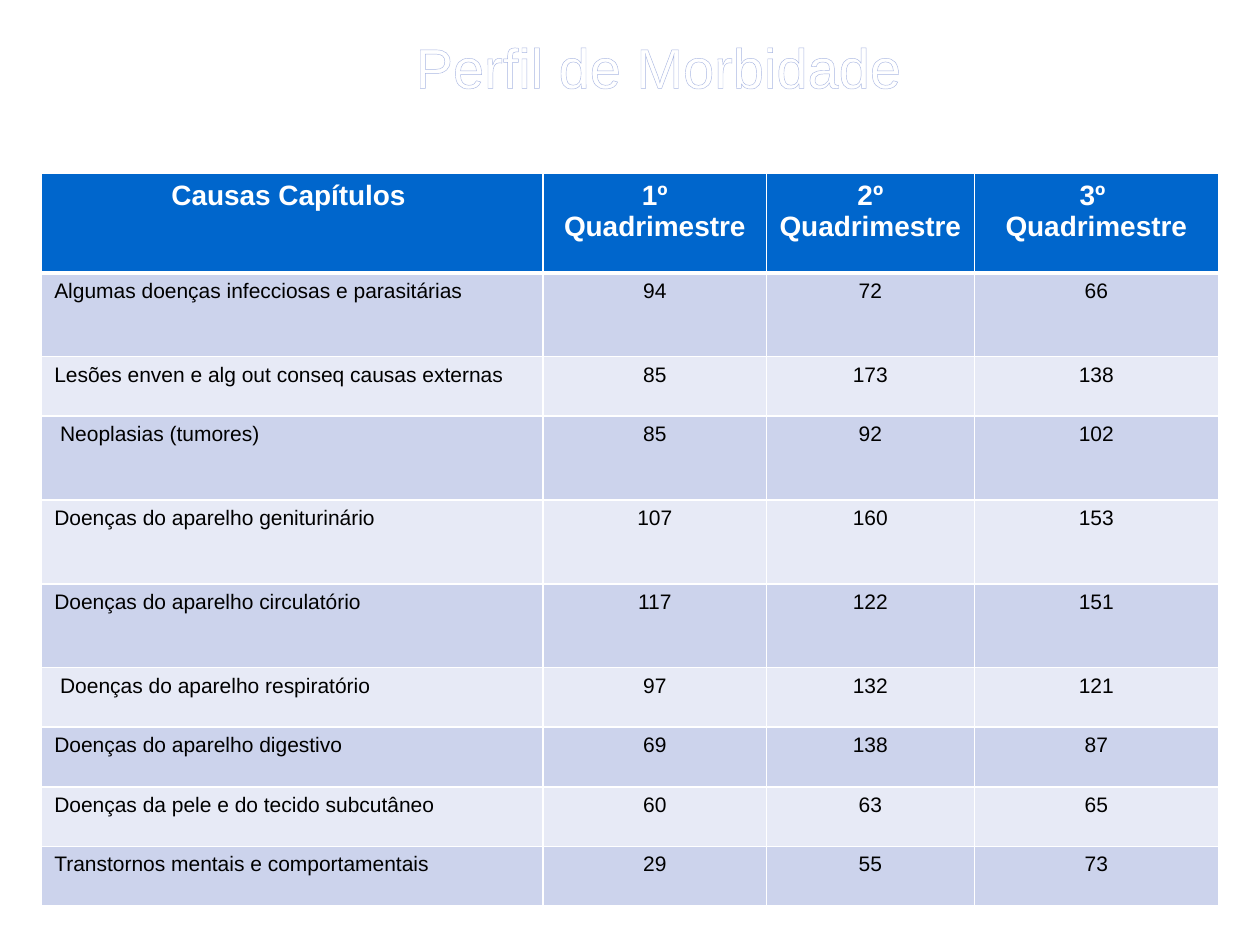
import pptx
import pptx.dml.color
import pptx.enum.text
import pptx.oxml
import pptx.oxml.ns
import pptx.util

Cm, Pt = pptx.util.Cm, pptx.util.Pt
CENTER = pptx.enum.text.PP_ALIGN.CENTER
LEFT = pptx.enum.text.PP_ALIGN.LEFT

WHITE, BLACK, BLUE, LAVENDER = "FFFFFF", "000000", "0066CC", "AAB8E2"
BANDS = ["CCD3EC", "E7EAF6"]
THIN, THICK = 1, 3

HEADER = ["Causas Capítulos ", "1º Quadrimestre", "2º Quadrimestre", "3º \nQuadrimestre"]
TALL, SHORT = 1.69, 1.2
CAUSES = [
    (TALL, "Algumas doenças infecciosas e parasitárias", 94, 72, 66),
    (SHORT, "Lesões enven e alg out conseq causas externas", 85, 173, 138),
    (TALL, " Neoplasias (tumores)", 85, 92, 102),
    (TALL, "Doenças do aparelho geniturinário", 107, 160, 153),
    (TALL, "Doenças do aparelho circulatório", 117, 122, 151),
    (SHORT, " Doenças do aparelho respiratório", 97, 132, 121),
    (SHORT, "Doenças do aparelho digestivo", 69, 138, 87),
    (SHORT, "Doenças da pele e do tecido subcutâneo", 60, 63, 65),
    (SHORT, "Transtornos mentais e comportamentais", 29, 55, 73),
]
HEADER_HEIGHT = 2
COLUMN_WIDTHS = [10.11, 4.5, 4.19, 4.92]


def color(hex_value):
    return pptx.dml.color.RGBColor.from_string(hex_value)


def line_element(tag, hex_value, width):
    return pptx.oxml.parse_xml(
        f'<a:{tag} {pptx.oxml.ns.nsdecls("a")} w="{Pt(width)}"><a:solidFill>'
        f'<a:srgbClr val="{hex_value}"/></a:solidFill></a:{tag}>')


def write(frame, text, size=12, fill=BLACK, bold=False, align=LEFT, outline=None):
    """Write one paragraph per line of text; outline is (colour, points)."""
    for index, line in enumerate(text.split("\n")):
        para = frame.paragraphs[0] if index == 0 else frame.add_paragraph()
        para.alignment = align
        span = para.add_run()
        span.text = line
        span.font.name = "Arial"
        span.font.size = Pt(size)
        span.font.bold = bold
        span.font.color.rgb = color(fill)
        if outline:
            span.font._element.insert(0, line_element("ln", *outline))


def style_cell(cell, fill, top=THIN, bottom=THIN):
    properties = cell._tc.get_or_add_tcPr()
    for tag, width in (("lnL", THIN), ("lnR", THIN), ("lnT", top), ("lnB", bottom)):
        properties.append(line_element(tag, WHITE, width))
    cell.fill.solid()
    cell.fill.fore_color.rgb = color(fill)


def add_title(page, left, top, width, height):
    box = page.shapes.add_textbox(Cm(left), Cm(top), Cm(width), Cm(height))
    box.text_frame.word_wrap = True
    write(box.text_frame, "Perfil de Morbidade", size=32, fill=WHITE,
          outline=(LAVENDER, 0.8))


def add_morbidity_table(page, left, top):
    heights = [HEADER_HEIGHT] + [cause[0] for cause in CAUSES]
    table = page.shapes.add_table(
        len(heights), len(COLUMN_WIDTHS), Cm(left), Cm(top),
        Cm(sum(COLUMN_WIDTHS)), Cm(sum(heights))).table
    for column, width in zip(table.columns, COLUMN_WIDTHS):
        column.width = Cm(width)
    for row, height in zip(table.rows, heights):
        row.height = Cm(height)

    for column, text in enumerate(HEADER):
        cell = table.cell(0, column)
        style_cell(cell, BLUE, bottom=THICK)
        write(cell.text_frame, text, size=16, fill=WHITE, bold=True, align=CENTER)
    for row, (_, *values) in enumerate(CAUSES, start=1):
        for column, value in enumerate(values):
            cell = table.cell(row, column)
            style_cell(cell, BANDS[(row - 1) % 2], top=THICK if row == 1 else THIN)
            write(cell.text_frame, str(value), align=CENTER if column else LEFT)


def main():
    deck = pptx.Presentation()
    deck.slide_width, deck.slide_height = Cm(25.4), Cm(19.05)
    page = deck.slides.add_slide(deck.slide_layouts[6])
    add_morbidity_table(page, 0.84, 3.5)
    add_title(page, 8.13, 0.53, 10.54, 1.63)
    deck.save("out.pptx")


if __name__ == "__main__":
    main()
